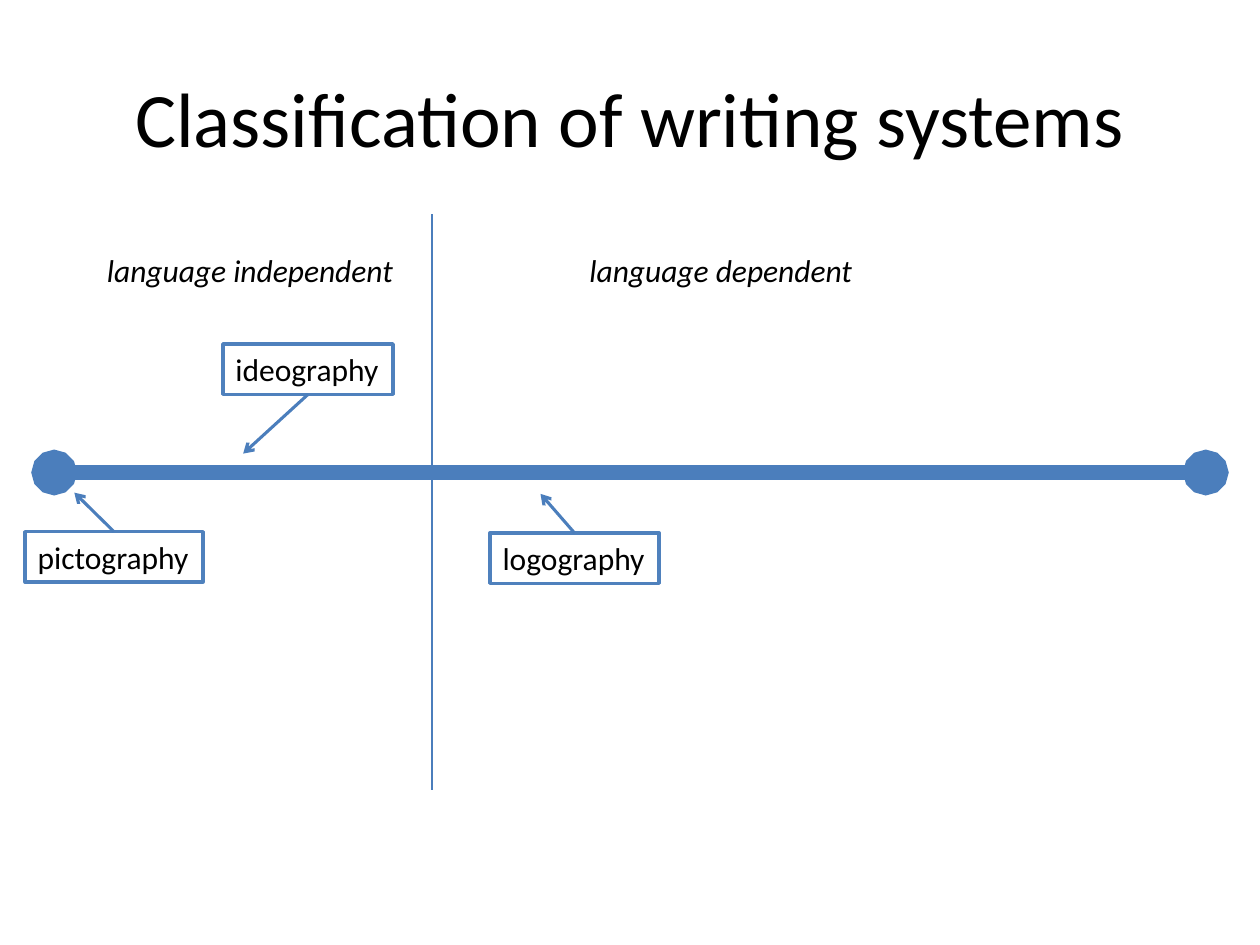
"""Build a slide that places writing systems on a language-dependence axis."""
from lxml.etree import SubElement as Sub
from pptx import Presentation
from pptx.dml.color import RGBColor as Rgb
from pptx.enum.shapes import MSO_CONNECTOR as Link
from pptx.enum.text import MSO_ANCHOR as Anchor, MSO_AUTO_SIZE as Fit, PP_ALIGN as Align
from pptx.oxml.ns import qn
from pptx.util import Inches, Pt

TITLE = "Classification of writing systems"
AXIS = ((0.43, 3.75), (9.57, 3.75))
SPLIT = ((3.43, 1.7), (3.43, 6.27))
HEADS = [("language independent", 0.75, 2.51), ("language dependent", 4.58, 2.37)]
HEAD_TOP = 1.94
ROW = 0.4
BOXES = [
    ("pictography", 0.2, 4.22, 1.41, (0.59, 3.91)),
    ("ideography", 1.77, 2.73, 1.35, (1.93, 3.6)),
    ("logography", 3.89, 4.23, 1.34, (4.29, 3.92)),
]
THEME = {
    "font": "Calibri",
    "ink": Rgb.from_string("000000"),
    "paper": Rgb.from_string("FFFFFF"),
    "edge": Rgb.from_string("4F81BD"),
    "line": Rgb.from_string("4B7EBC"),
    "title": Pt(44),
    "body": Pt(18),
    "axis": Pt(8.75),
    "split": Pt(1.25),
    "arrow": Pt(1.75),
    "box": Pt(2),
}


def style(item, **vals):
    for key, val in vals.items():
        setattr(item, key, val)


def place(item, *spot):
    keys = ("left", "top", "width", "height")
    style(item, **{key: Inches(val) for key, val in zip(keys, spot)})


def write(item, text, size, align, slant=False):
    para = item.text_frame.paragraphs[0]
    para.alignment = align
    run = para.add_run()
    run.text = text
    style(run.font, name=THEME["font"], size=THEME[size], italic=slant)
    run.font.color.rgb = THEME["ink"]


def label(slide, text, left, top, width, slant=False):
    item = slide.shapes.add_textbox(*map(Inches, (left, top, width, ROW)))
    style(item.text_frame, word_wrap=False, auto_size=Fit.SHAPE_TO_FIT_TEXT)
    write(item, text, "body", Align.LEFT, slant)
    return item


def draw(slide, start, end, width, **tips):
    item = slide.shapes.add_connector(Link.STRAIGHT, *map(Inches, start + end))
    item.line.color.rgb = THEME["line"]
    item.line.width = THEME[width]
    for tip, kind in tips.items():
        Sub(item.line._get_or_add_ln(), qn(f"a:{tip}"), type=kind)
    Sub(item._element.spPr, qn("a:effectLst"))


def main():
    deck = Presentation()
    style(deck, slide_width=Inches(10), slide_height=Inches(7.5))
    slide = deck.slides.add_slide(deck.slide_layouts[5])

    draw(slide, *AXIS, "axis", headEnd="oval", tailEnd="oval")
    for text, left, top, width, tip in BOXES:
        box = label(slide, text, left, top, width)
        box.fill.solid()
        box.fill.fore_color.rgb = THEME["paper"]
        box.line.color.rgb = THEME["edge"]
        box.line.width = THEME["box"]
        edge = top if tip[1] < top else top + ROW
        draw(slide, (left + width / 2, edge), tip, "arrow", tailEnd="arrow")

    title = slide.shapes.title
    place(title, 0.5, 0.3, 9, 1.25)
    title.text_frame.vertical_anchor = Anchor.MIDDLE
    write(title, TITLE, "title", Align.CENTER)

    draw(slide, *SPLIT, "split")
    for text, left, width in HEADS:
        label(slide, text, left, HEAD_TOP, width, slant=True)
    deck.save("out.pptx")


if __name__ == "__main__":
    main()
